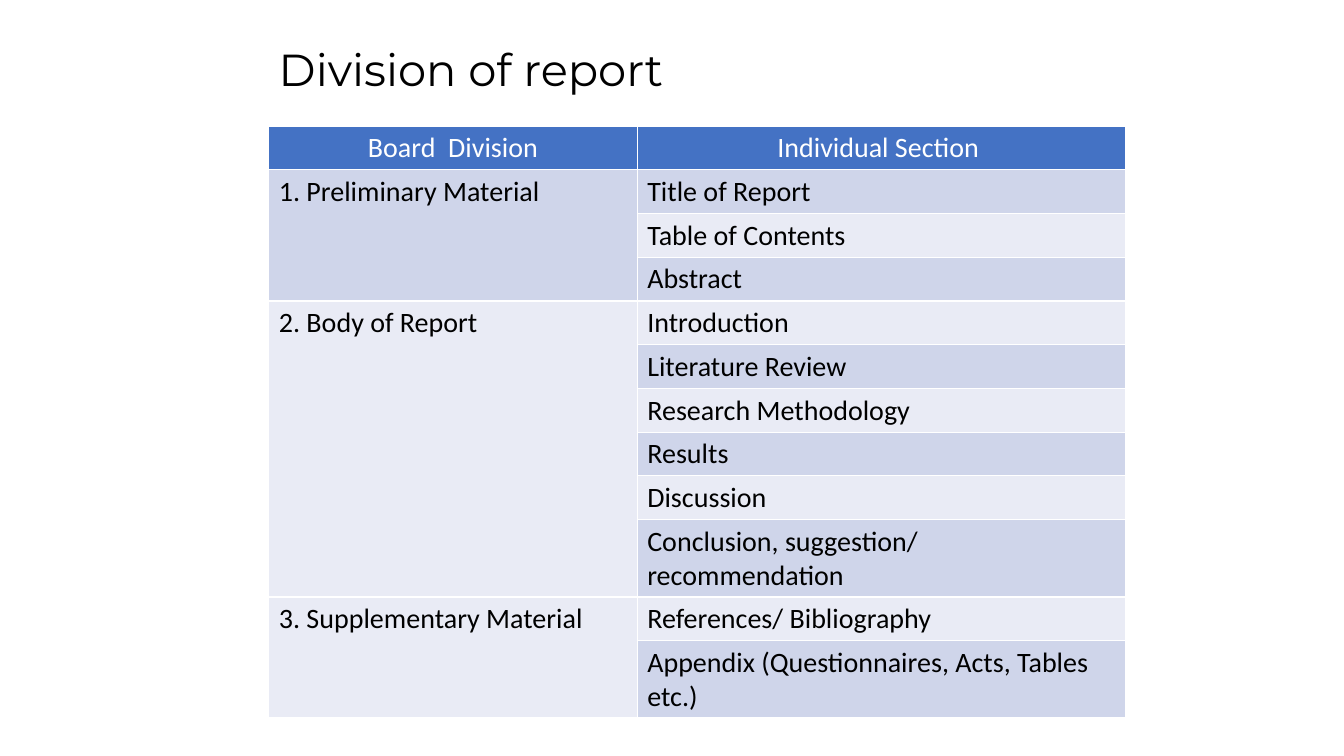
from lxml import etree
from pptx import Presentation, util as u
from pptx.dml.color import RGBColor
from pptx.enum import text
from pptx.oxml import ns

WHITE = RGBColor(0xFF, 0xFF, 0xFF)
BLACK = RGBColor(0, 0, 0)
HEADER_BLUE = RGBColor(0x44, 0x72, 0xC4)
BANDS = (RGBColor(0xCF, 0xD5, 0xEA), RGBColor(0xE9, 0xEB, 0xF5))

WIDTH, HEIGHT = u.Inches(13.33), u.Inches(7.5)
LEFT, SPAN = 0.2, 0.6375
TITLE_TOP, TITLE_HEIGHT = 0.01, 0.17
TABLE_TOP, ROW_HEIGHT = 0.1667, 0.055
COLUMN_SHARES = (0.43, 0.57)

HEADINGS = ("Board  Division", "Individual Section ")
DIVISIONS = {
    "1. Preliminary Material": ["Title of Report", "Table of Contents", "Abstract"],
    "2. Body of Report": [
        "Introduction", "Literature Review", "Research Methodology",
        "Results", "Discussion", "Conclusion, suggestion/ recommendation",
    ],
    "3. Supplementary Material": [
        "References/ Bibliography",
        "Appendix (Questionnaires, Acts, Tables etc.)",
    ],
}


def across(share):
    return round(WIDTH * share)


def down(share):
    return round(HEIGHT * share)


def write(frame, words, size=20, font="Calibri", color=BLACK,
          align=text.PP_ALIGN.LEFT, spacing=1.0):
    para = frame.paragraphs[0]
    para.alignment = align
    para.line_spacing = spacing
    span = para.add_run()
    span.text = words
    span.font.size = u.Pt(size)
    span.font.name = font
    span.font.color.rgb = color


def add_title(page, words):
    box = page.shapes.add_textbox(across(LEFT), down(TITLE_TOP),
                                  across(SPAN), down(TITLE_HEIGHT))
    frame = box.text_frame
    frame.word_wrap = True
    frame.vertical_anchor = text.MSO_ANCHOR.MIDDLE
    write(frame, words, size=32, font="Montserrat", spacing=0.9)


def style_cell(cell, fill):
    properties = cell._tc.get_or_add_tcPr()
    for side in ("a:lnL", "a:lnR", "a:lnT", "a:lnB"):
        line = etree.SubElement(properties, ns.qn(side), w=str(u.Pt(1)))
        solid = etree.SubElement(line, ns.qn("a:solidFill"))
        etree.SubElement(solid, ns.qn("a:srgbClr"), val=str(WHITE))
    cell.fill.solid()
    cell.fill.fore_color.rgb = fill


def add_division_table(page):
    count = 1 + sum(len(sections) for sections in DIVISIONS.values())
    table = page.shapes.add_table(
        count, len(HEADINGS), across(LEFT), down(TABLE_TOP),
        across(SPAN), down(ROW_HEIGHT * count)).table
    for column, share in zip(table.columns, COLUMN_SHARES):
        column.width = across(SPAN * share)
    for row in table.rows:
        row.height = down(ROW_HEIGHT)

    for index, heading in enumerate(HEADINGS):
        cell = table.cell(0, index)
        style_cell(cell, HEADER_BLUE)
        write(cell.text_frame, heading, color=WHITE, align=text.PP_ALIGN.CENTER)

    first = 1
    for division, sections in DIVISIONS.items():
        division_fill = BANDS[(first - 1) % 2]
        for index, section in enumerate(sections, first):
            style_cell(table.cell(index, 0), division_fill)
            style_cell(table.cell(index, 1), BANDS[(index - 1) % 2])
            write(table.cell(index, 1).text_frame, section)
        last = first + len(sections) - 1
        table.cell(first, 0).merge(table.cell(last, 0))
        write(table.cell(first, 0).text_frame, division)
        first = last + 1


def main():
    deck = Presentation()
    deck.slide_width, deck.slide_height = WIDTH, HEIGHT
    page = deck.slides.add_slide(deck.slide_layouts[6])
    add_title(page, "Division of report")
    add_division_table(page)
    deck.save("out.pptx")


if __name__ == "__main__":
    main()
